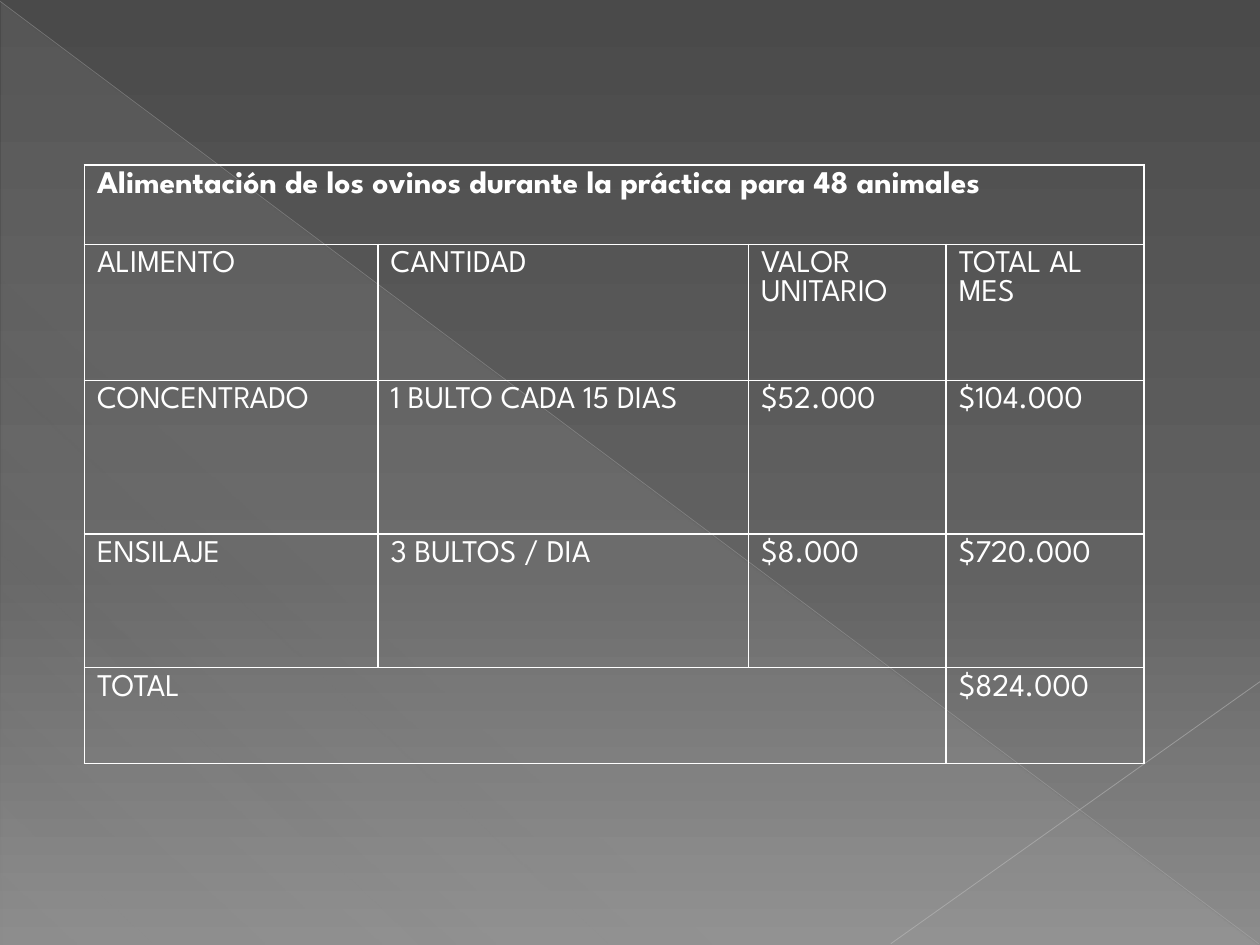
from typing import NamedTuple

from lxml.etree import SubElement
from pptx import Presentation
from pptx.dml.color import RGBColor
from pptx.enum.shapes import MSO_CONNECTOR, MSO_SHAPE
from pptx.oxml.ns import qn
from pptx.util import Inches, Pt

WHITE = RGBColor(0xFF, 0xFF, 0xFF)
DARK_GREY = RGBColor(0x4A, 0x4A, 0x4A)
MID_GREY = RGBColor(0x62, 0x62, 0x62)
LIGHT_GREY = RGBColor(0x8C, 0x8C, 0x8C)
TRIANGLE_GREY = RGBColor(0xD2, 0xD2, 0xD2)
DIAGONAL_GREY = RGBColor(0xBF, 0xBF, 0xBF)
CORNER_GREY = RGBColor(0xC6, 0xC6, 0xC6)
FONT = "League Spartan"


class Stop(NamedTuple):
    position: int
    color: RGBColor
    opacity: int = 100


class Line(NamedTuple):
    start: tuple[float, float]
    end: tuple[float, float]
    color: RGBColor
    width: float
    opacity: int


class FeedRow(NamedTuple):
    height: float
    texts: tuple[str, ...]
    spans: tuple[int, ...] = (1, 1, 1, 1)
    bold: bool = False


LINES = [
    Line((0, 0.01), (9.99, 7.49), DIAGONAL_GREY, 0.39, 35),
    Line((10, 5.41), (7.07, 7.49), CORNER_GREY, 0.47, 45),
]
COLUMN_WIDTHS = (2.33, 2.94, 1.57, 1.57)
ROWS = [
    FeedRow(0.63, ("Alimentación de los ovinos durante la práctica para 48 animales",), (4,), True),
    FeedRow(1.08, ("ALIMENTO", "CANTIDAD", "VALOR UNITARIO", "TOTAL AL MES")),
    FeedRow(1.22, ("CONCENTRADO", "1 BULTO CADA 15 DIAS", "$52.000", "$104.000")),
    FeedRow(1.06, ("ENSILAJE", "3 BULTOS / DIA", "$8.000", "$720.000")),
    FeedRow(0.76, ("TOTAL", "$824.000"), (3, 1)),
]


def add_color(parent, color: RGBColor, opacity: int = 100) -> None:
    color_element = SubElement(parent, qn("a:srgbClr"), val=str(color))
    if opacity < 100:
        SubElement(color_element, qn("a:alpha"), val=str(opacity * 1000))


def set_gradient(fill, owner, stops: list[Stop], clockwise_angle: int) -> None:
    """Give a fill, held by the owner element, its stops and direction."""
    fill.gradient()
    fill.gradient_angle = 360 - clockwise_angle
    stop_list = next(owner.iter(qn("a:gsLst")))
    for old_stop in list(stop_list):
        stop_list.remove(old_stop)
    for stop in stops:
        element = SubElement(stop_list, qn("a:gs"), pos=str(stop.position * 1000))
        add_color(element, stop.color, stop.opacity)


def add_line(slide, line: Line) -> None:
    connector = slide.shapes.add_connector(
        MSO_CONNECTOR.STRAIGHT, *(Inches(value) for value in line.start + line.end))
    connector.line.width = Pt(line.width)
    connector.line.color.rgb = line.color
    color_element = next(connector.element.spPr.iter(qn("a:srgbClr")))
    SubElement(color_element, qn("a:alpha"), val=str(line.opacity * 1000))
    SubElement(connector.element.spPr, qn("a:effectLst"))


def write_text(text_frame, text: str, *, size: float = 18, bold: bool = False,
               color: RGBColor = WHITE) -> None:
    run = text_frame.paragraphs[0].add_run()
    run.text = text
    run.font.name = FONT
    run.font.size = Pt(size)
    run.font.bold = bold
    run.font.color.rgb = color


def format_cell(cell) -> None:
    """Outline the cell in white and leave it without fill."""
    properties = cell._tc.get_or_add_tcPr()
    for side in ("lnL", "lnR", "lnT", "lnB"):
        border = SubElement(properties, qn(f"a:{side}"), w=str(Pt(1)))
        add_color(SubElement(border, qn("a:solidFill")), WHITE)
    cell.fill.background()


def add_feed_table(slide, left: float, top: float) -> None:
    frame = slide.shapes.add_table(
        len(ROWS), len(COLUMN_WIDTHS), Inches(left), Inches(top),
        Inches(sum(COLUMN_WIDTHS)), Inches(sum(row.height for row in ROWS)))
    table = frame.table
    table.first_row = table.horz_banding = False
    for column, width in zip(table.columns, COLUMN_WIDTHS):
        column.width = Inches(width)
    for row_index, row in enumerate(ROWS):
        table.rows[row_index].height = Inches(row.height)
        for cell in table.rows[row_index].cells:
            format_cell(cell)
        column_index = 0
        for text, span in zip(row.texts, row.spans):
            cell = table.cell(row_index, column_index)
            if span > 1:
                cell.merge(table.cell(row_index, column_index + span - 1))
            write_text(cell.text_frame, text, bold=row.bold)
            column_index += span


def main() -> None:
    presentation = Presentation()
    presentation.slide_width, presentation.slide_height = Inches(10), Inches(7.5)
    slide = presentation.slides.add_slide(presentation.slide_layouts[6])

    # Background
    set_gradient(slide.background.fill, slide.element,
                 [Stop(0, DARK_GREY), Stop(60, MID_GREY), Stop(100, LIGHT_GREY)], 90)

    # Translucent triangle and thin diagonals
    triangle = slide.shapes.add_shape(
        MSO_SHAPE.RIGHT_TRIANGLE, Inches(0.01), Inches(0.02), Inches(9.98), Inches(7.48))
    triangle.shadow.inherit = False
    triangle.line.fill.background()
    set_gradient(triangle.fill, triangle.element,
                 [Stop(0, TRIANGLE_GREY, 10), Stop(70, TRIANGLE_GREY, 8),
                  Stop(100, TRIANGLE_GREY, 1)], 133)
    for line in LINES:
        add_line(slide, line)

    # Feeding costs
    add_feed_table(slide, 0.67, 1.31)

    presentation.save("out.pptx")


if __name__ == "__main__":
    main()
